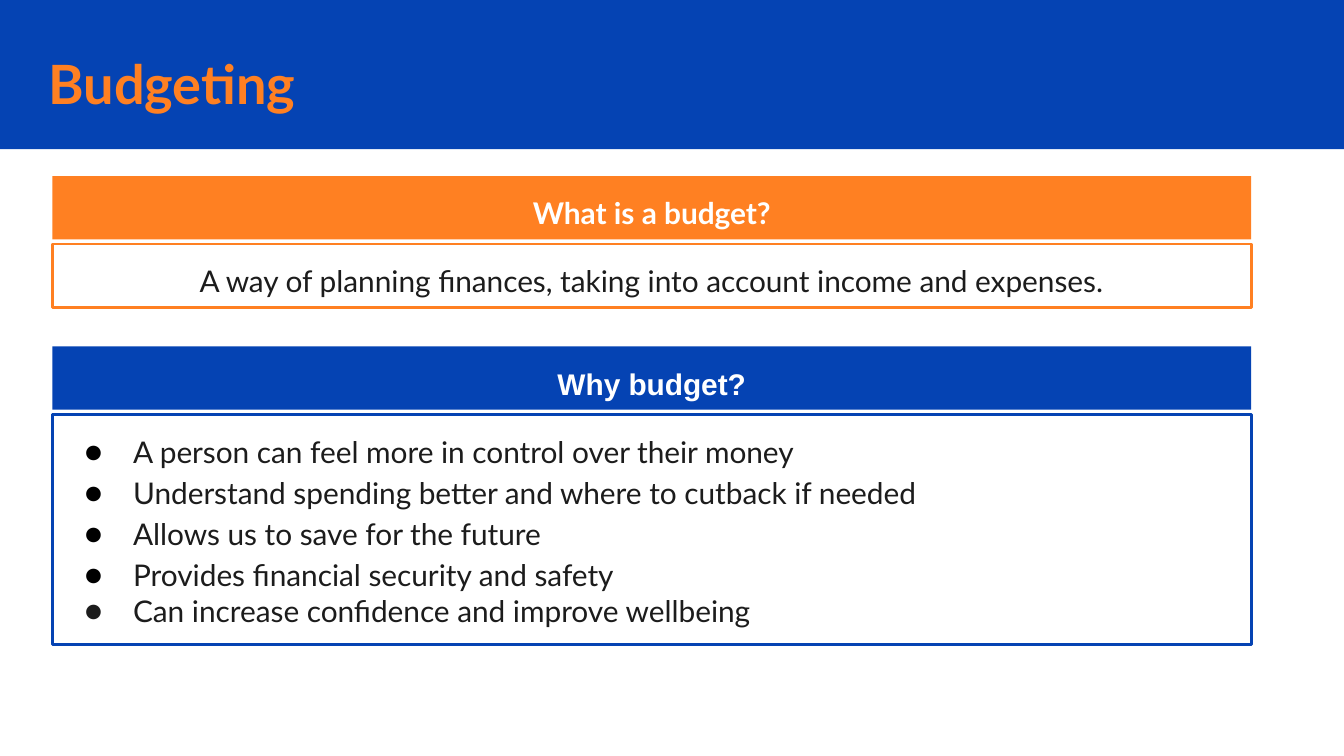
from lxml import etree
from pptx import Presentation
from pptx.dml.color import RGBColor
from pptx.enum.shapes import MSO_SHAPE
from pptx.enum.text import MSO_ANCHOR, MSO_AUTO_SIZE, PP_ALIGN
from pptx.oxml.ns import qn
from pptx.util import Pt

RECTANGLE = MSO_SHAPE.RECTANGLE
TOP = MSO_ANCHOR.TOP
NO_AUTOFIT = MSO_AUTO_SIZE.NONE
LEFT = PP_ALIGN.LEFT
CENTER = PP_ALIGN.CENTER

COLORS = {
    "blue": "0543B3",
    "orange": "FF8022",
    "white": "FFFFFF",
    "ink": "1C1C1C",
    "black": "000000",
}

SLIDE_WIDTH, SLIDE_HEIGHT = 720, 405
BAND_HEIGHT = 80
PANEL_LEFT, PANEL_WIDTH = 28.1, 642.2
ROW_HEIGHT = 33.9
ROW_PITCH = 36.4
LIST_HEIGHT = 123.1
DEFINITION_TOP, REASONS_TOP = 94.4, 185.6

REASONS = [
    "A person can feel more in control over their money",
    "Understand spending better and where to cutback if needed",
    "Allows us to save for the future",
    "Provides financial security and safety",
    "Can increase confidence and improve wellbeing",
]


class SlideBuilder:
    font_name = "Lato"
    text_size = 16
    title_size = 29
    inset = 7.2
    line_spacing = 1.15
    border = 1.5
    bullet_margin, bullet_indent = 36, -26

    def __init__(self, slide):
        self.slide = slide

    def color(self, name):
        return RGBColor.from_string(COLORS[name])

    def place(self, shape, left, top, width, height):
        shape.left, shape.top = Pt(left), Pt(top)
        shape.width, shape.height = Pt(width), Pt(height)

    def paint(self, shape, fill=None, line=None):
        if fill:
            shape.fill.solid()
            shape.fill.fore_color.rgb = self.color(fill)
        else:
            shape.fill.background()
        if line:
            shape.line.color.rgb = self.color(line)
            shape.line.width = Pt(self.border)
        else:
            shape.line.fill.background()

    def frame(self, shape):
        text_frame = shape.text_frame
        text_frame.word_wrap = True
        text_frame.auto_size = NO_AUTOFIT
        text_frame.vertical_anchor = TOP
        text_frame.margin_left = text_frame.margin_right = Pt(self.inset)
        text_frame.margin_top = text_frame.margin_bottom = Pt(self.inset)
        return text_frame

    def set_text(self, paragraph, text, color, align, size=text_size, bold=False,
                 font_name=font_name, spacing=line_spacing):
        paragraph.text = text
        paragraph.alignment = align
        paragraph.line_spacing = spacing
        paragraph.space_before = Pt(0)
        font = paragraph.font
        font.name, font.size, font.bold = font_name, Pt(size), bold
        font.color.rgb = self.color(color)

    def bullet(self, paragraph, color):
        properties = paragraph._p.get_or_add_pPr()
        properties.set("marL", str(Pt(self.bullet_margin)))
        properties.set("indent", str(Pt(self.bullet_indent)))
        bullet_color = etree.SubElement(properties, qn("a:buClr"))
        etree.SubElement(bullet_color, qn("a:srgbClr"), val=COLORS[color])
        etree.SubElement(properties, qn("a:buFont"), typeface=self.font_name)
        etree.SubElement(properties, qn("a:buChar"), char="●")

    def rectangle(self, left, top, width, height, fill=None, line=None):
        shape = self.slide.shapes.add_shape(
            RECTANGLE, Pt(left), Pt(top), Pt(width), Pt(height))
        shape.shadow.inherit = False
        self.paint(shape, fill, line)
        return shape

    def band(self, height, fill):
        shape = self.rectangle(0, 0, SLIDE_WIDTH, height, fill)
        self.slide.shapes._spTree.insert(2, shape._element)

    def title(self, text, left, top, width, height):
        shape = self.slide.shapes.title
        self.place(shape, left, top, width, height)
        self.set_text(self.frame(shape).paragraphs[0], text, "orange", LEFT,
                      size=self.title_size, bold=True)

    def heading(self, text, top, fill, font_name=font_name):
        shape = self.rectangle(PANEL_LEFT, top, PANEL_WIDTH, ROW_HEIGHT, fill)
        self.set_text(self.frame(shape).paragraphs[0], text, "white", CENTER,
                      bold=True, font_name=font_name)

    def statement(self, text, top, line):
        shape = self.rectangle(PANEL_LEFT, top, PANEL_WIDTH, ROW_HEIGHT, line=line)
        self.set_text(self.frame(shape).paragraphs[0], text, "ink", CENTER)

    def bullet_list(self, items, top, height, line):
        shape = self.slide.placeholders[1]
        self.place(shape, PANEL_LEFT, top, PANEL_WIDTH, height)
        self.paint(shape, "white", line)
        text_frame = self.frame(shape)
        for index, item in enumerate(items):
            last = index == len(items) - 1
            paragraph = text_frame.add_paragraph() if index else text_frame.paragraphs[0]
            self.bullet(paragraph, "ink" if last else "black")
            self.set_text(paragraph, item, "ink", LEFT,
                          spacing=1.0 if last else self.line_spacing)


def main():
    presentation = Presentation()
    presentation.slide_width = Pt(SLIDE_WIDTH)
    presentation.slide_height = Pt(SLIDE_HEIGHT)
    builder = SlideBuilder(presentation.slides.add_slide(presentation.slide_layouts[1]))

    builder.band(BAND_HEIGHT, "blue")
    builder.title("Budgeting", 18.7, 14.4, 717, 49.7)

    builder.heading("What is a budget?", DEFINITION_TOP, "orange")
    builder.statement(
        "A way of planning finances, taking into account income and expenses.",
        DEFINITION_TOP + ROW_PITCH, "orange")

    builder.heading("Why budget?", REASONS_TOP, "blue", font_name="Arial")
    builder.bullet_list(REASONS, REASONS_TOP + ROW_PITCH, LIST_HEIGHT, "blue")

    presentation.save("out.pptx")


if __name__ == "__main__":
    main()
